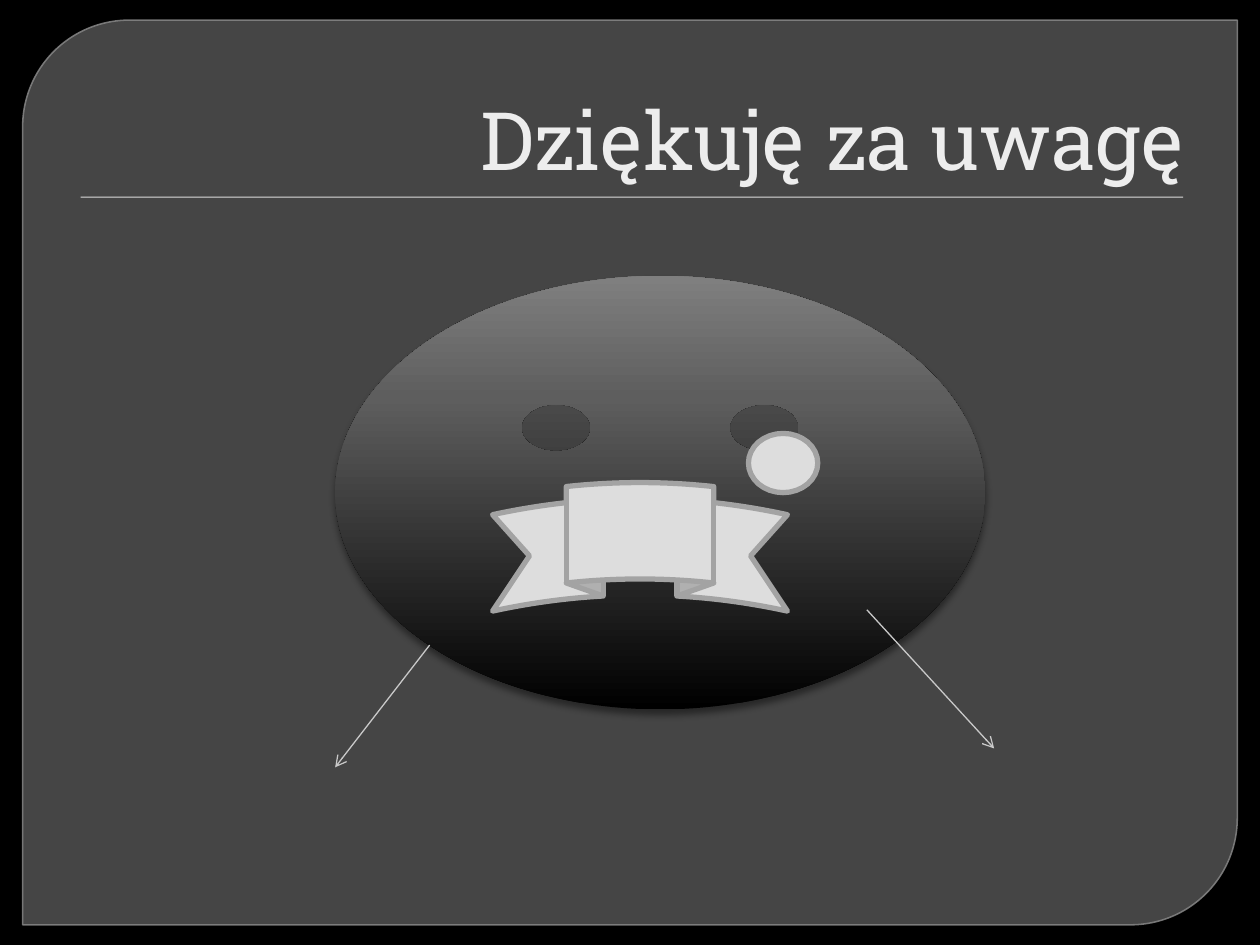
from copy import deepcopy
from dataclasses import dataclass
from typing import Optional

from lxml import etree
from pptx import Presentation, util as u
from pptx.dml.color import RGBColor
from pptx.enum import shapes, text
from pptx.oxml import ns

COLUMNS, ROWS = 100, 75
CELL = u.Inches(0.1)
KIND = shapes.MSO_SHAPE


@dataclass(frozen=True)
class Theme:
    backdrop: str = "000000"
    panel: str = "6B6B6B"
    panel_edge: str = "848484"
    light: str = "DDDDDD"
    outline: str = "A3A3A3"
    limb: str = "C9C9C9"
    title: str = "EDEDED"
    face: tuple = ((0, "000000"), (0.72, "5E5E5E"), (1, "7F7F7F"))
    font: str = "Roboto Slab"
    title_size: int = 46


THEME = Theme()


@dataclass(frozen=True)
class Shadow:
    opacity: int
    blur: int
    distance: int


@dataclass(frozen=True)
class Figure:
    """A preset shape; left, top, width and height in grid cells."""
    kind: int
    cells: tuple
    fill: object
    fill_opacity: int = 100
    edge: Optional[str] = None
    edge_width: float = 3
    edge_opacity: int = 100
    adjustments: tuple = ()
    shadow: Optional[Shadow] = None


@dataclass(frozen=True)
class Limb:
    start: tuple
    end: tuple


FIGURES = (
    Figure(KIND.ROUND_2_DIAG_RECTANGLE, (1.8, 1.6, 96.4, 71.8), THEME.panel, 65,
           THEME.panel_edge, 0.87, 88, (0.118, 0)),
    Figure(KIND.RECTANGLE, (6.4, 15.6, 87.5, 0.1), THEME.light, shadow=Shadow(75, 1, 1)),
    Figure(KIND.SMILEY_FACE, (26.6, 21.9, 51.6, 34.4), THEME.face, shadow=Shadow(43, 4, 3)),
    Figure(KIND.CURVED_UP_RIBBON, (39.1, 38.3, 23.4, 10.2), THEME.light, edge=THEME.outline),
    Figure(KIND.STAR_16_POINT, (59.4, 34.4, 5.5, 4.7), THEME.light, edge=THEME.outline,
           adjustments=(0.5,)),
)
LIMBS = (Limb((34.1, 51.2), (26.6, 60.9)), Limb((68.8, 48.4), (78.9, 59.4)))
FRONT = 3  # figures from here on lie over the limbs


def grid(*cells: float) -> list:
    return [round(cell * CELL) for cell in cells]


def rgb(value: str) -> RGBColor:
    return RGBColor.from_string(value)


def child(parent, tag: str, **values):
    return etree.SubElement(parent, ns.qn(tag), {key: str(val) for key, val in values.items()})


def paint(fill, value: str, opacity: int = 100) -> None:
    fill.solid()
    fill.fore_color.rgb = rgb(value)
    if opacity < 100:
        child(fill._xPr.find(".//" + ns.qn("a:srgbClr")), "a:alpha", val=opacity * 1000)


def paint_gradient(fill, stops: tuple) -> None:
    """Fill from bottom to top through any number of stops."""
    fill.gradient()
    fill.gradient_angle = 90
    stop_list = fill._xPr.find(".//" + ns.qn("a:gsLst"))
    for _ in range(len(stops) - len(stop_list)):
        stop_list.append(deepcopy(stop_list[0]))
    for stop, (position, value) in zip(fill.gradient_stops, stops):
        stop.position = position
        stop.color.rgb = rgb(value)


def cast(shape, shadow: Shadow) -> None:
    effects = shape._element.spPr.find(ns.qn("a:effectLst"))
    outer = child(effects, "a:outerShdw", blurRad=u.Pt(shadow.blur), dist=u.Pt(shadow.distance),
                  dir=90 * 60000, rotWithShape=0)
    child(child(outer, "a:srgbClr", val=THEME.backdrop), "a:alpha", val=shadow.opacity * 1000)


def draw_figure(page, figure: Figure) -> None:
    shape = page.shapes.add_shape(figure.kind, *grid(*figure.cells))
    shape.shadow.inherit = False
    for index, value in enumerate(figure.adjustments):
        shape.adjustments[index] = value
    if isinstance(figure.fill, str):
        paint(shape.fill, figure.fill, figure.fill_opacity)
    else:
        paint_gradient(shape.fill, figure.fill)
    if figure.edge:
        shape.line.width = u.Pt(figure.edge_width)
        paint(shape.line.fill, figure.edge, figure.edge_opacity)
    else:
        shape.line.fill.background()
    if figure.shadow:
        cast(shape, figure.shadow)


def draw_limb(page, limb: Limb) -> None:
    line = page.shapes.add_connector(shapes.MSO_CONNECTOR.STRAIGHT,
                                     *grid(*limb.start, *limb.end))
    line.line.width = u.Pt(0.75)
    paint(line.line.fill, THEME.limb)
    child(line.line._get_or_add_ln(), "a:tailEnd", type="arrow")
    child(line._element.spPr, "a:effectLst")


def draw_title(page, words: str) -> None:
    box = page.shapes.add_textbox(*grid(5, 2.8, 90, 12.5))
    frame = box.text_frame
    frame.word_wrap = True
    frame.vertical_anchor = text.MSO_ANCHOR.BOTTOM
    para = frame.paragraphs[0]
    para.alignment = text.PP_ALIGN.RIGHT
    span = para.add_run()
    span.text = words
    for name, value in {"name": THEME.font, "size": u.Pt(THEME.title_size)}.items():
        setattr(span.font, name, value)
    span.font.color.rgb = rgb(THEME.title)


def main() -> None:
    deck = Presentation()
    deck.slide_width, deck.slide_height = grid(COLUMNS, ROWS)
    page = deck.slides.add_slide(deck.slide_layouts[6])
    paint(page.background.fill, THEME.backdrop)
    for figure in FIGURES[:FRONT]:
        draw_figure(page, figure)
    for limb in LIMBS:
        draw_limb(page, limb)
    for figure in FIGURES[FRONT:]:
        draw_figure(page, figure)
    draw_title(page, "Dziękuję za uwagę")
    deck.save("out.pptx")


if __name__ == "__main__":
    main()
